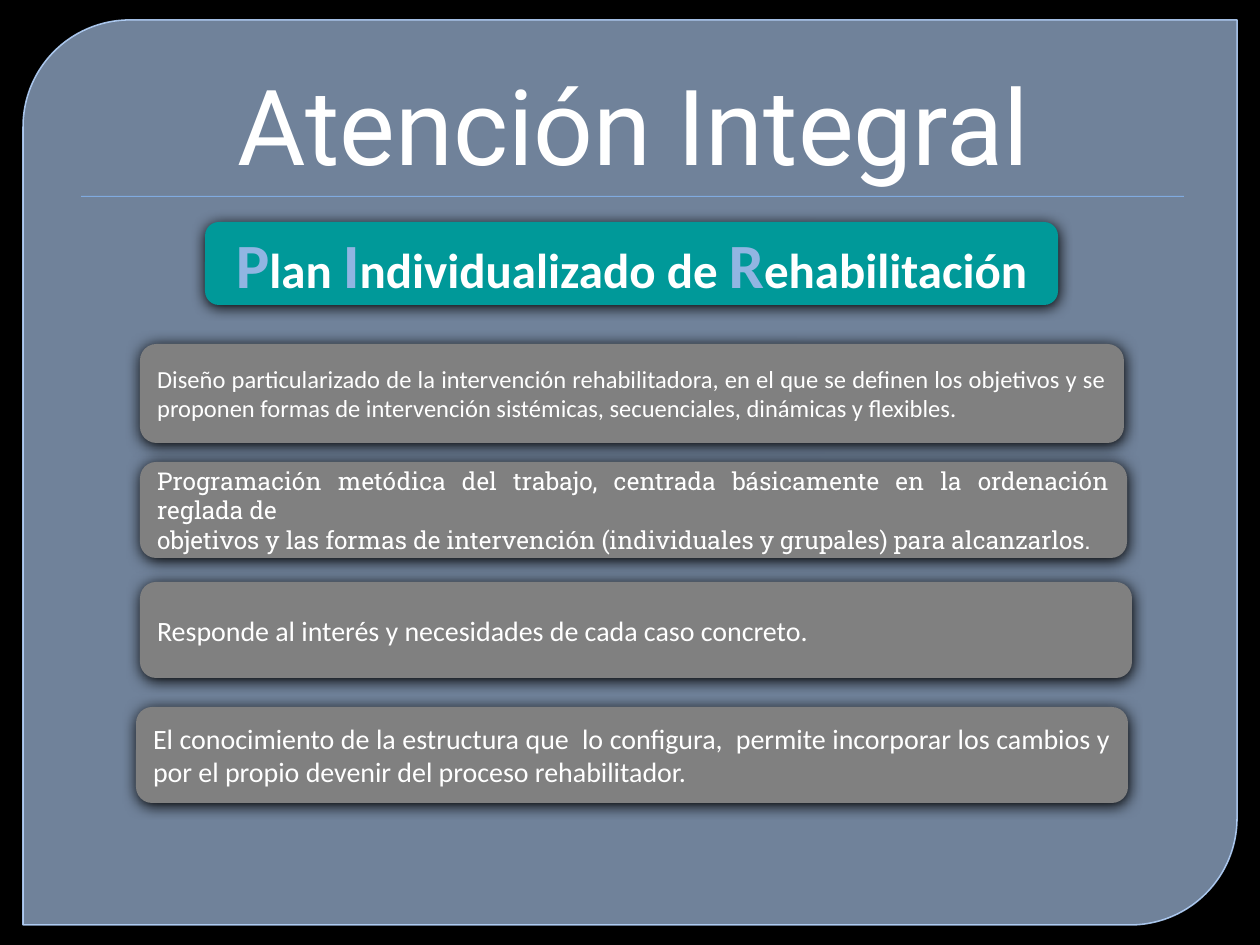
from lxml import etree
from pptx import Presentation
from pptx.dml.color import RGBColor
from pptx.enum.shapes import MSO_SHAPE
from pptx.enum.text import MSO_ANCHOR, MSO_AUTO_SIZE, PP_ALIGN
from pptx.oxml.ns import qn
from pptx.util import Emu, Pt

PX = 914400 / 126
ROUNDED = MSO_SHAPE.ROUNDED_RECTANGLE
CENTER, JUSTIFY = PP_ALIGN.CENTER, PP_ALIGN.JUSTIFY
BLACK = RGBColor(0x00, 0x00, 0x00)
WHITE = RGBColor(0xFF, 0xFF, 0xFF)
PANEL_FILL = RGBColor(0xAD, 0xC9, 0xEE)
PANEL_LINE = RGBColor(0xB7, 0xD6, 0xFF)
RULE = RGBColor(0x80, 0xAA, 0xDF)
TEAL = RGBColor(0x00, 0x99, 0x99)
GRAY = RGBColor(0x80, 0x80, 0x80)
INITIAL = RGBColor(0x91, 0xB5, 0xE2)

# Content: a paragraph is a list of (text, format) runs
TITLE = "Atención Integral"
TITLE_FORMAT = {"name": "Roboto", "size": Pt(60), "bold": False, "color": WHITE}
BIG = {"name": "Calibri", "size": Pt(36), "bold": True, "color": INITIAL}
WORD = {"name": "Calibri", "size": Pt(28), "bold": True, "color": WHITE}
BODY = {"name": "Calibri", "size": Pt(14), "color": WHITE}
SLAB = {**BODY, "name": "Roboto Slab"}
LARGE = {**BODY, "size": Pt(16)}

PLAN = [("P", "lan "), ("I", "ndividualizado de "), ("R", "ehabilitación")]
CARDS = [
    ((140, 344, 984, 99), BODY, [
        "Diseño particularizado de la intervención rehabilitadora, en el que se definen "
        "los objetivos y se proponen formas de intervención sistémicas, secuenciales, "
        "dinámicas y flexibles."]),
    ((140, 462, 987, 96), SLAB, [
        "Programación metódica del trabajo, centrada básicamente en la ordenación "
        "reglada de",
        "objetivos y las formas de intervención (individuales y grupales) para "
        "alcanzarlos."]),
    ((140, 582, 992, 96), LARGE, [
        "Responde al interés y necesidades de cada caso concreto."]),
    ((136, 707, 992, 96), LARGE, [
        "El conocimiento de la estructura que  lo configura,  permite incorporar los "
        "cambios y por el propio devenir del proceso rehabilitador."]),
]


def px(length):
    return Emu(round(length * PX))


def set_alpha(fill, percent):
    color = fill._xPr.find(qn("a:solidFill"))[0]
    etree.SubElement(color, qn("a:alpha"), val=str(percent * 1000))


def add_box(page, kind, place, color):
    box = page.shapes.add_shape(kind, *map(px, place))
    box.shadow.inherit = False
    box.fill.solid()
    box.fill.fore_color.rgb = color
    box.line.fill.background()
    return box


def add_shadow(box, blur, percent):
    effects = box._element.spPr.find(qn("a:effectLst"))
    shadow = etree.SubElement(
        effects, qn("a:outerShdw"), blurRad=str(Pt(blur)), dist=str(Pt(1)),
        dir="5400000", algn="ctr", rotWithShape="0")
    color = etree.SubElement(shadow, qn("a:srgbClr"), val=str(BLACK))
    etree.SubElement(color, qn("a:alpha"), val=str(percent * 1000))


def write(frame, paragraphs, align, anchor):
    frame.word_wrap = True
    frame.vertical_anchor = anchor
    for index, runs in enumerate(paragraphs):
        para = frame.add_paragraph() if index else frame.paragraphs[0]
        para.alignment = align
        for text, style in runs:
            span = para.add_run()
            span.text = text
            for key, value in style.items():
                if key == "color":
                    span.font.color.rgb = value
                else:
                    setattr(span.font, key, value)


def add_card(page, place, color, paragraphs, align):
    card = add_box(page, ROUNDED, place, color)
    add_shadow(card, 8.5, 100)
    write(card.text_frame, paragraphs, align, MSO_ANCHOR.MIDDLE)


def main():
    deck = Presentation()
    deck.slide_width, deck.slide_height = px(1260), px(945)
    page = deck.slides.add_slide(deck.slide_layouts[5])
    page.background.fill.solid()
    page.background.fill.fore_color.rgb = BLACK

    # Panel and rule under the title
    panel = add_box(page, MSO_SHAPE.ROUND_2_DIAG_RECTANGLE, (23, 20, 1214, 905), PANEL_FILL)
    panel.adjustments[0] = 0.118
    set_alpha(panel.fill, 65)
    panel.line.color.rgb = PANEL_LINE
    panel.line.width = Pt(0.87)
    set_alpha(panel.line.fill, 88)
    rule = add_box(page, MSO_SHAPE.RECTANGLE, (81, 196, 1103, 1), RULE)
    add_shadow(rule, 1, 75)

    # Title, brought in front of the panel
    title = page.shapes.title
    title._element.getparent().append(title._element)
    title.left, title.top, title.width, title.height = map(px, (63, 35, 1134, 158))
    title.text_frame.auto_size = MSO_AUTO_SIZE.NONE
    write(title.text_frame, [[(TITLE, TITLE_FORMAT)]], CENTER, MSO_ANCHOR.BOTTOM)
    title.text_frame.paragraphs[0]._p.get_or_add_pPr().set("marL", str(px(7)))

    # Plan heading and its cards
    heading = [run for initial, rest in PLAN for run in ((initial, BIG), (rest, WORD))]
    add_card(page, (205, 222, 853, 83), TEAL, [heading], CENTER)
    for place, style, texts in CARDS:
        add_card(page, place, GRAY, [[(text, style)] for text in texts], JUSTIFY)

    deck.save("out.pptx")


if __name__ == "__main__":
    main()
